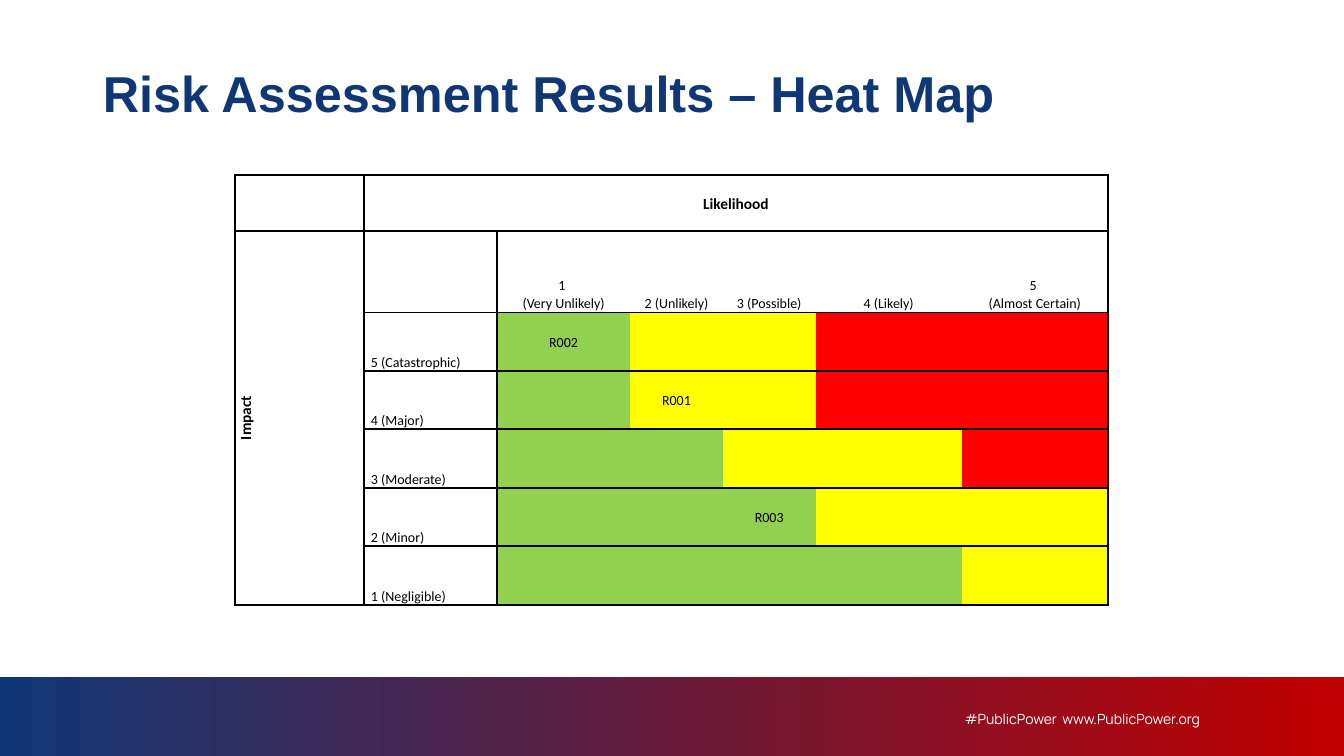
from lxml.etree import SubElement
from pptx import Presentation
from pptx.dml.color import RGBColor
from pptx.enum.shapes import MSO_SHAPE
from pptx.enum.text import MSO_ANCHOR as Anchor, PP_ALIGN as Align
from pptx.oxml.ns import qn
from pptx.util import Inches, Pt

NAVY, CRIMSON, WHITE, BLACK = "103775", "C00000", "FFFFFF", "000000"
HEAT = {"G": "92D050", "Y": "FFFF00", "R": "FF0000"}
PLAIN = "{2D5ABB26-0587-4C30-8999-92F81FD0307C}"

WIDTHS = [1.28, 1.32, 1.32, 0.92, 0.92, 1.45, 1.45]
HEIGHTS = [0.55, 0.81] + [0.58] * 5
ODDS = ["1 \n(Very Unlikely)", "2 (Unlikely)", "3 (Possible)",
        "4 (Likely)", "5 \n(Almost Certain)"]
IMPACTS = [("5 (Catastrophic)", "GYYRR"), ("4 (Major)", "GYYRR"),
           ("3 (Moderate)", "GGYYR"), ("2 (Minor)", "GGGYY"),
           ("1 (Negligible)", "GGGGY")]
RISKS = {(2, 2): "R002", (3, 3): "R001", (5, 4): "R003"}


def color(code):
    return RGBColor.from_string(code)


class Deck:
    """Holds the text style, the presentation and the current slide."""

    def __init__(self):
        self.font, self.body, self.small = "Arial", "Calibri", "Manrope"
        self.prs = Presentation()
        self.prs.slide_width, self.prs.slide_height = Inches(13.33), Inches(7.5)
        self.slide = self.prs.slides.add_slide(self.prs.slide_layouts[5])

    def words(self, frame, text, size, font, tint, bold=False,
              align=Align.LEFT, space=1.0):
        """Fill a text frame and format its paragraphs."""
        frame.text = text
        for para in frame.paragraphs:
            para.alignment, para.line_spacing = align, space
            para.font.size, para.font.name = Pt(size), font
            para.font.bold, para.font.color.rgb = bold, color(tint)

    def title(self, text):
        box = self.slide.shapes.title
        box.left, box.top = Inches(0.92), Inches(0.4)
        box.width, box.height = Inches(11.5), Inches(1.1)
        box.text_frame.vertical_anchor = Anchor.MIDDLE
        self.words(box.text_frame, text, 36, self.font, NAVY, True, space=0.9)

    def band(self, left, top, width, height, tints):
        """Add a bar that fades from right to left through the tints."""
        bar = self.slide.shapes.add_shape(
            MSO_SHAPE.RECTANGLE, Inches(left), Inches(top), Inches(width), Inches(height))
        bar.shadow.inherit = False
        bar.line.fill.background()
        bar.fill.gradient()
        bar.fill.gradient_angle = 180
        for stop, tint in zip(bar.fill.gradient_stops, tints):
            stop.color.rgb = color(tint)

    def label(self, left, top, width, height, text):
        box = self.slide.shapes.add_textbox(
            Inches(left), Inches(top), Inches(width), Inches(height))
        frame = box.text_frame
        frame.word_wrap = True
        frame.margin_left = frame.margin_right = 0
        frame.margin_top = frame.margin_bottom = 0
        self.words(frame, text, 10, self.small, WHITE, align=Align.RIGHT)

    def grid(self, left, top, widths, heights):
        """Add an unstyled table with the given column and row sizes."""
        frame = self.slide.shapes.add_table(
            len(heights), len(widths), Inches(left), Inches(top),
            Inches(sum(widths)), Inches(sum(heights)))
        table = frame.table
        table.first_row = table.horz_banding = False
        table._tbl.tblPr.find(qn("a:tableStyleId")).text = PLAIN
        for col, width in zip(table.columns, widths):
            col.width = Inches(width)
        for row, height in zip(table.rows, heights):
            row.height = Inches(height)
        return table

    def edge(self, cell, names):
        """Rule the named sides of a cell."""
        props = cell._tc.get_or_add_tcPr()
        for name in names:
            line = SubElement(props, qn("a:ln" + name), w=str(Pt(1.5)))
            fill = SubElement(line, qn("a:solidFill"))
            SubElement(fill, qn("a:srgbClr"), val=BLACK)

    def cell(self, cell, text, anchor=Anchor.MIDDLE, align=Align.CENTER,
             size=10, bold=False):
        cell.margin_left = cell.margin_right = Inches(0.07)
        cell.margin_top = cell.margin_bottom = 0
        cell.vertical_anchor = anchor
        self.words(cell.text_frame, text, size, self.body, BLACK, bold, align, 1.07)


def sides(row, col):
    """Name the ruled sides of a cell, in the order L, R, T, B."""
    names = "L" if col < 2 else ""
    if col in (0, 6) or (row, col) == (0, 1):
        names += "R"
    if col or row < 2:
        names += "T"
    if col or row < 2 or row == 6:
        names += "B"
    return names


def heatmap(deck):
    table = deck.grid(2.33, 1.74, WIDTHS, HEIGHTS)
    table.cell(0, 1).merge(table.cell(0, 6))
    table.cell(1, 0).merge(table.cell(6, 0))
    for row in range(len(HEIGHTS)):
        for col in range(len(WIDTHS)):
            cell = table.cell(row, col)
            deck.edge(cell, sides(row, col))
            cell.fill.background()
    deck.cell(table.cell(0, 1), "Likelihood", size=11, bold=True)
    deck.cell(table.cell(1, 0), "Impact", size=11, bold=True)
    table.cell(1, 0)._tc.get_or_add_tcPr().set("vert", "vert270")
    for col, text in enumerate(ODDS, 2):
        deck.cell(table.cell(1, col), text, Anchor.BOTTOM)
    for row, (text, levels) in enumerate(IMPACTS, 2):
        deck.cell(table.cell(row, 1), text, Anchor.BOTTOM, Align.LEFT)
        for col, level in enumerate(levels, 2):
            cell = table.cell(row, col)
            cell.fill.solid()
            cell.fill.fore_color.rgb = color(HEAT[level])
    for spot, name in RISKS.items():
        deck.cell(table.cell(*spot), name)


def main():
    deck = Deck()
    deck.band(0, 6.72, 13.33, 0.78, [CRIMSON, NAVY])
    deck.label(9.17, 7.05, 2.73, 0.3, "#PublicPower  www.PublicPower.org")
    deck.title("Risk Assessment Results – Heat Map")
    heatmap(deck)
    deck.prs.save("out.pptx")


if __name__ == "__main__":
    main()
